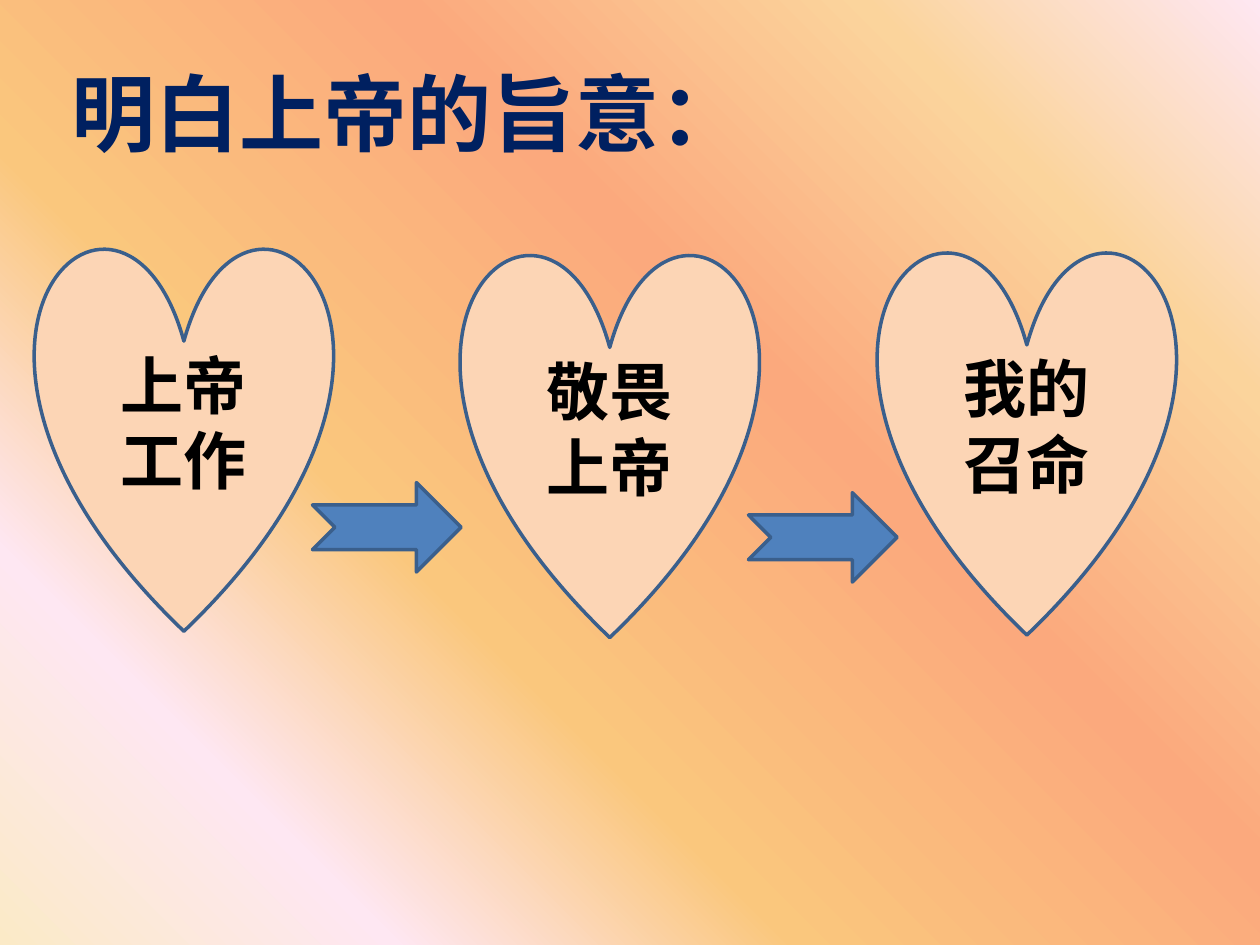
from dataclasses import dataclass

from lxml.etree import SubElement
from pptx import Presentation
from pptx.dml.color import RGBColor
from pptx.enum.shapes import MSO_SHAPE
from pptx.enum.text import MSO_ANCHOR, MSO_AUTO_SIZE, PP_ALIGN
from pptx.oxml import parse_xml
from pptx.oxml.ns import nsdecls, qn
from pptx.slide import Slide
from pptx.text.text import TextFrame
from pptx.util import Inches, Pt

FONT = "Noto Sans CJK SC"
COLORS = {
    "peach": "FCD5B5",
    "blue": "4F81BD",
    "edge": "3A5F8C",
    "black": "000000",
    "navy": "002060",
}
STOPS = {
    0: "FBEAC7",
    18: "FEE7F2",
    36: "FAC77D",
    61: "FBA97D",
    82: "FBD49C",
    100: "FEE7F2",
}


@dataclass
class Item:
    kind: MSO_SHAPE
    left: float
    top: float
    text: str = ""


@dataclass
class Style:
    width: float
    height: float
    fill: str


STYLES = {
    MSO_SHAPE.HEART: Style(2.36, 3.07, "peach"),
    MSO_SHAPE.NOTCHED_RIGHT_ARROW: Style(1.18, 0.71, "blue"),
}
ITEMS = [
    Item(MSO_SHAPE.HEART, 0.28, 1.94, "上帝工作"),
    Item(MSO_SHAPE.HEART, 3.66, 1.99, "敬畏上帝"),
    Item(MSO_SHAPE.NOTCHED_RIGHT_ARROW, 2.48, 3.83),
    Item(MSO_SHAPE.HEART, 6.97, 1.97, "我的召命"),
    Item(MSO_SHAPE.NOTCHED_RIGHT_ARROW, 5.94, 3.91),
]


def color(name: str) -> RGBColor:
    return RGBColor.from_string(COLORS[name])


def paint(slide: Slide) -> None:
    stops = "".join(
        f'<a:gs pos="{pos * 1000}"><a:srgbClr val="{tone}"/></a:gs>'
        for pos, tone in STOPS.items()
    )
    back = parse_xml(
        f'<p:bg {nsdecls("p", "a")}><p:bgPr><a:gradFill rotWithShape="1">'
        f'<a:gsLst>{stops}</a:gsLst><a:path path="circle">'
        '<a:fillToRect t="100000" r="100000"/></a:path></a:gradFill>'
        "<a:effectLst/></p:bgPr></p:bg>"
    )
    slide.element.cSld.insert(0, back)


def write(frame: TextFrame, text: str, size: int, tone: str) -> None:
    para = frame.paragraphs[0]
    para.alignment = PP_ALIGN.CENTER
    run = para.add_run()
    run.text = text
    font = run.font
    font.name = FONT
    font.size = Pt(size)
    font.bold = True
    font.color.rgb = color(tone)
    SubElement(font._element, qn("a:ea")).set("typeface", FONT)


def draw(slide: Slide, item: Item) -> None:
    style = STYLES[item.kind]
    shape = slide.shapes.add_shape(
        item.kind,
        Inches(item.left),
        Inches(item.top),
        Inches(style.width),
        Inches(style.height),
    )
    shape.shadow.inherit = False
    shape.fill.solid()
    shape.fill.fore_color.rgb = color(style.fill)
    shape.line.color.rgb = color("edge")
    shape.line.width = Pt(2)
    if item.text:
        shape.text_frame.word_wrap = True
        shape.text_frame.vertical_anchor = MSO_ANCHOR.MIDDLE
        write(shape.text_frame, item.text, 36, "black")


def head(slide: Slide, text: str) -> None:
    box = slide.shapes.add_textbox(
        Inches(0.44), Inches(0.44), Inches(5.59), Inches(0.91)
    )
    box.text_frame.word_wrap = False
    box.text_frame.auto_size = MSO_AUTO_SIZE.SHAPE_TO_FIT_TEXT
    write(box.text_frame, text, 48, "navy")


def main() -> None:
    deck = Presentation()
    deck.slide_width = Inches(10)
    deck.slide_height = Inches(7.5)
    slide = deck.slides.add_slide(deck.slide_layouts[6])
    paint(slide)
    for item in ITEMS:
        draw(slide, item)
    head(slide, "明白上帝的旨意：")
    deck.save("out.pptx")


if __name__ == "__main__":
    main()
